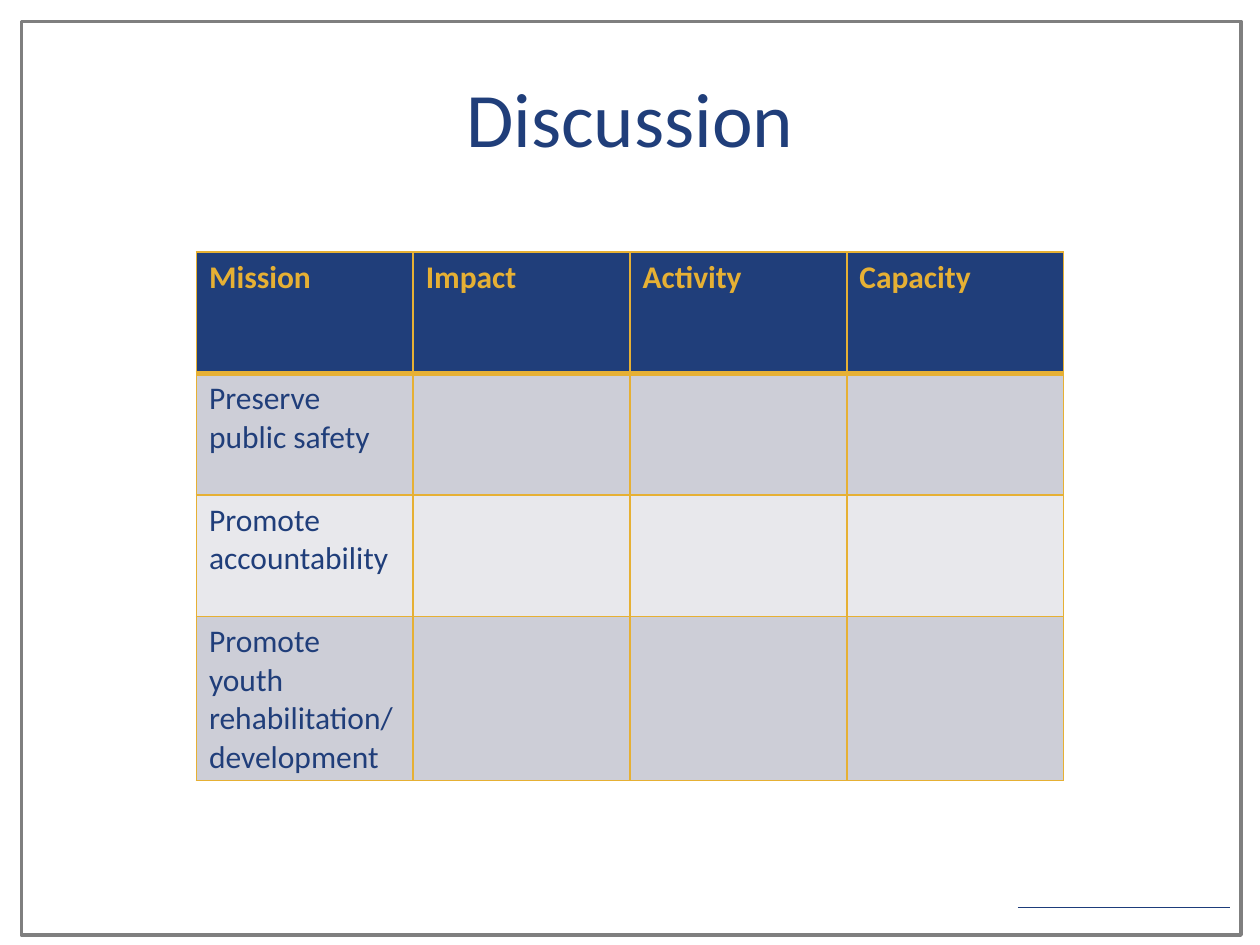
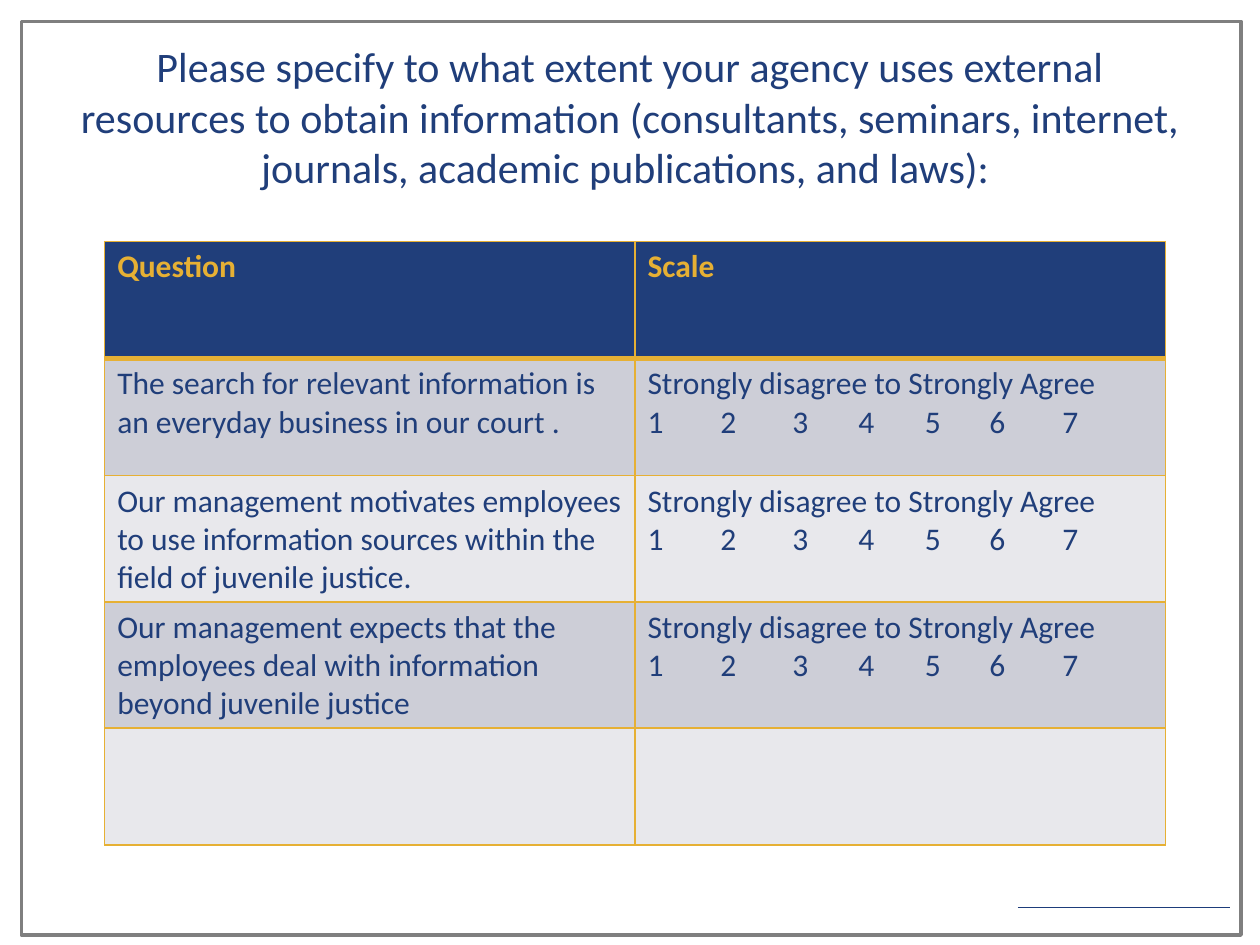
"""Build two juvenile justice discussion slides, each with a title and a table."""
from lxml.etree import SubElement
from pptx import Presentation
from pptx.dml.color import RGBColor
from pptx.enum.shapes import MSO_CONNECTOR as Connector, MSO_SHAPE as Shape
from pptx.enum.text import MSO_ANCHOR as Anchor, PP_ALIGN as Align
from pptx.oxml.ns import qn
from pptx.util import Cm, Pt

FONT = "Calibri"
COLORS = {
    "navy": "203E7A",
    "gold": "E6B034",
    "rule": "1D3C7A",
    "frame": "7F7F7F",
    "dark_band": "CDCED7",
    "light_band": "E8E8EC",
}
SCALE = ["Strongly disagree to Strongly Agree", "\t".join("1234567")]
SCALE_STOPS = [1.47, 2.92, 4.25, 5.59, 6.89, 8.36]

SLIDES = [
    {
        "title": "Discussion",
        "title_size": 44,
        "left": 3.96, "top": 5.08, "column_width": 4.37, "row_height": 2.45,
        "rows": [
            [["Mission"], ["Impact"], ["Activity"], ["Capacity"]],
            [["Preserve public safety"], [], [], []],
            [["Promote accountability"], [], [], []],
            [["Promote youth rehabilitation/development"], [], [], []],
        ],
    },
    {
        "title": "Please specify to what extent your agency uses external resources "
                 "to obtain information (consultants, seminars, internet, journals, "
                 "academic publications, and laws): ",
        "title_size": 24,
        "left": 2.11, "top": 4.87, "column_width": 10.69, "row_height": 2.36,
        "rows": [
            [["Question"], ["Scale"]],
            [["The search for relevant information is an everyday business "
              "in our court ."], SCALE],
            [["Our management motivates employees to use information sources "
              "within the field of juvenile justice."], SCALE],
            [["Our management expects that the employees deal with information "
              "beyond juvenile justice"], SCALE],
            [[], []],
        ],
    },
]


def rgb(name):
    return RGBColor.from_string(COLORS[name])


def add_run(paragraph, text, size, color, bold=False):
    run = paragraph.add_run()
    run.text = text
    run.font.name, run.font.size, run.font.bold = FONT, Pt(size), bold
    run.font.color.rgb = rgb(color)


def add_frame(slide):
    rule = slide.shapes.add_connector(
        Connector.STRAIGHT, Cm(20.52), Cm(18.29), Cm(24.79), Cm(18.29))
    rule.line.color.rgb, rule.line.width = rgb("rule"), Pt(0.75)
    SubElement(rule._element.spPr, qn("a:effectLst"))
    frame = slide.shapes.add_shape(
        Shape.RECTANGLE, Cm(0.43), Cm(0.43), Cm(24.59), Cm(18.42))
    frame.shadow.inherit = False
    frame.fill.background()
    frame.line.color.rgb, frame.line.width = rgb("frame"), Pt(2)
    SubElement(frame.line._get_or_add_ln(), qn("a:round"))


def add_title(slide, text, size):
    box = slide.shapes.add_textbox(Cm(1.27), Cm(0.76), Cm(22.86), Cm(3.18))
    box.text_frame.word_wrap = True
    box.text_frame.vertical_anchor = Anchor.MIDDLE
    paragraph = box.text_frame.paragraphs[0]
    paragraph.alignment = Align.CENTER
    add_run(paragraph, text, size, "title" if "title" in COLORS else "navy")


def add_borders(cell, row_index):
    widths = {"L": 1, "R": 1, "T": 3 if row_index == 1 else 1,
              "B": 3 if row_index == 0 else 1}
    for side, width in widths.items():
        line = SubElement(cell._tc.get_or_add_tcPr(), qn(f"a:ln{side}"), w=str(Pt(width)))
        fill = SubElement(line, qn("a:solidFill"))
        SubElement(fill, qn("a:srgbClr"), val=COLORS["gold"])


def add_tab_stops(paragraph):
    tabs = SubElement(paragraph._p.get_or_add_pPr(), qn("a:tabLst"))
    for stop in SCALE_STOPS:
        SubElement(tabs, qn("a:tab"), pos=str(Cm(stop)), algn="l")


def fill_cell(cell, lines, row_index):
    header = row_index == 0
    band = "dark_band" if row_index % 2 else "light_band"
    add_borders(cell, row_index)
    cell.fill.solid()
    cell.fill.fore_color.rgb = rgb("navy" if header else band)
    frame = cell.text_frame
    for index, line in enumerate(lines):
        paragraph = frame.add_paragraph() if index else frame.paragraphs[0]
        if "\t" in line:
            add_tab_stops(paragraph)
        add_run(paragraph, line, 18, "gold" if header else "navy", header)


def add_table(slide, content):
    rows = content["rows"]
    width, height = Cm(content["column_width"]), Cm(content["row_height"])
    table = slide.shapes.add_table(
        len(rows), len(rows[0]), Cm(content["left"]), Cm(content["top"]),
        width * len(rows[0]), height * len(rows)).table
    table.horz_banding = False
    for row_index, row in enumerate(rows):
        for column_index, lines in enumerate(row):
            fill_cell(table.cell(row_index, column_index), lines, row_index)


def main():
    presentation = Presentation()
    presentation.slide_width, presentation.slide_height = Cm(25.4), Cm(19.05)
    for content in SLIDES:
        slide = presentation.slides.add_slide(presentation.slide_layouts[6])
        add_frame(slide)
        add_title(slide, content["title"], content["title_size"])
        add_table(slide, content)
    presentation.save("out.pptx")


if __name__ == "__main__":
    main()
